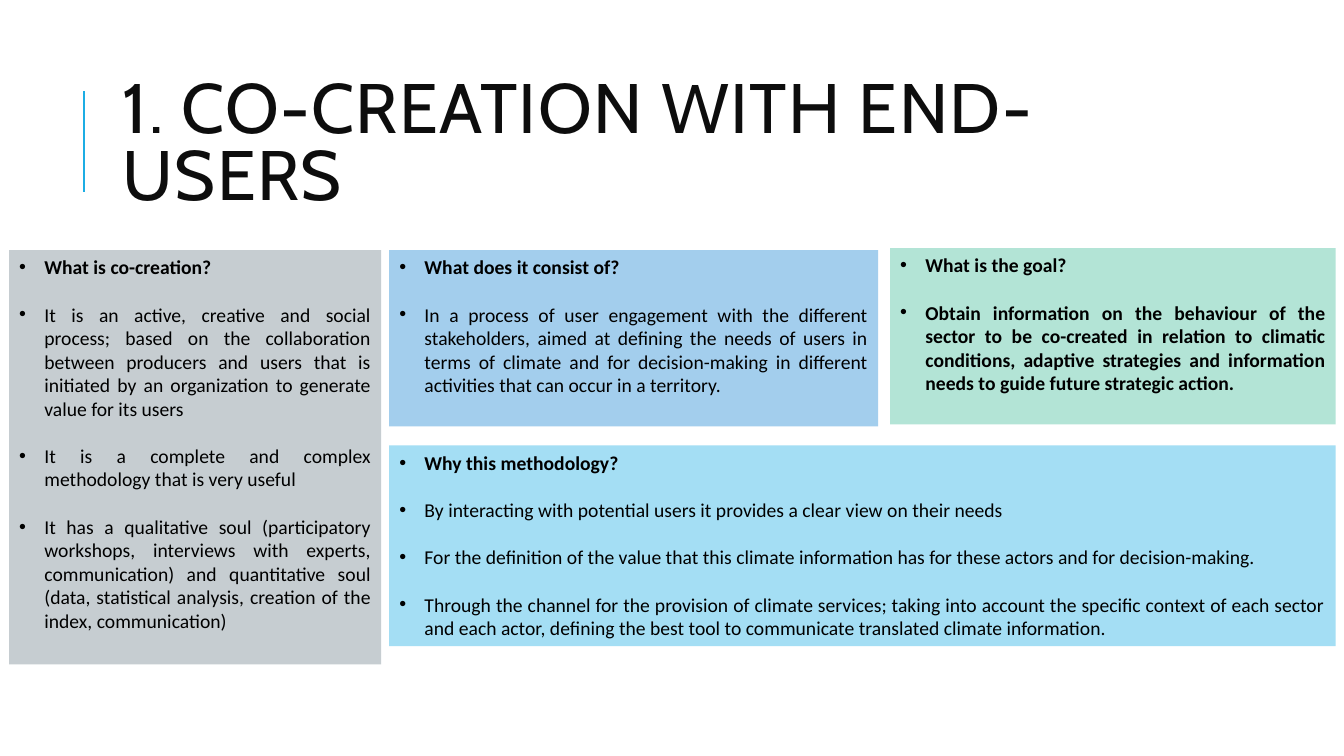
from lxml import etree
from pptx import Presentation
from pptx.dml import color
from pptx.enum import shapes, text
from pptx.oxml import ns
from pptx.util import Pt

# Content
TITLE = "1. CO-CREATION WITH END-USERS"
COLOURS = {"accent": "1CADE4", "title": "0D0D0D", "text": "000000",
           "grey": "C6CDD1", "blue": "A3CEED", "green": "B3E4D6", "sky": "A4DEF4"}
WHAT = ["What is co-creation?",
        "It is an active, creative and social process; based on the collaboration between "
        "producers and users that is initiated by an organization to generate value for its users",
        "It is a complete and complex methodology that is very useful",
        "It has a qualitative soul (participatory workshops, interviews with experts, "
        "communication) and quantitative soul (data, statistical analysis, creation of the "
        "index, communication)"]
CONTENTS = ["What does it consist of?",
            "In a process of user engagement with the different stakeholders, aimed at defining "
            "the needs of users in terms of climate and for decision-making in different "
            "activities that can occur in a territory."]
GOAL = ["What is the goal?",
        "Obtain information on the behaviour of the sector to be co-created in relation to "
        "climatic conditions, adaptive strategies and information needs to guide future "
        "strategic action."]
WHY = ["Why this methodology?",
       "By interacting with potential users it provides a clear view on their needs",
       "For the definition of the value that this climate information has for these actors "
       "and for decision-making.",
       "Through the channel for the provision of climate services; taking into account the "
       "specific context of each sector and each actor, defining the best tool to communicate "
       "translated climate information."]

# Layout in points
LEFT, MIDDLE, GOAL_LEFT, RIGHT = 6.5, 278, 635.8, 954
TOP, UPPER_HEIGHT = 178.6, 126
PANELS = [  # lines, fill, left, top, width, height, number of bold lines
    (WHAT, "grey", LEFT, TOP, 265.7, 296, 1),
    (CONTENTS, "blue", MIDDLE, TOP, 349.2, UPPER_HEIGHT, 1),
    (GOAL, "green", GOAL_LEFT, TOP - 1.4, RIGHT - GOAL_LEFT, UPPER_HEIGHT, 2),
    (WHY, "sky", MIDDLE, 318.2, RIGHT - MIDDLE, 143.3, 1),
]


def rgb(name):
    return color.RGBColor.from_string(COLOURS[name])


def place(shape, left, top, width, height, anchor):
    shape.left, shape.top, shape.width, shape.height = map(Pt, (left, top, width, height))
    frame = shape.text_frame
    frame.word_wrap = True
    frame.auto_size = text.MSO_AUTO_SIZE.NONE
    frame.vertical_anchor = anchor
    return frame


def write(para, words, *, font, size, colour, bold=False, align=text.PP_ALIGN.LEFT,
          leading=1.0, before=0, after=0, tracking=0, bullet=None):
    para.alignment, para.line_spacing = align, leading
    para.space_before, para.space_after = Pt(before), Pt(after)
    span = para.add_run()
    span.text = words
    span.font.name, span.font.size, span.font.bold = font, Pt(size), bold
    span.font.color.rgb = rgb(colour)
    if tracking:
        span.font._element.set("spc", str(tracking * 100))
    if bullet:
        properties = para._p.get_or_add_pPr()
        properties.set("marL", str(Pt(18)))
        properties.set("indent", str(-Pt(18)))
        etree.SubElement(properties, ns.qn("a:buFont")).set("typeface", "Arial")
        etree.SubElement(properties, ns.qn("a:buChar")).set("char", bullet)


deck = Presentation()
deck.slide_width, deck.slide_height = Pt(960), Pt(540)
# The comparison layout has a title and four bodies
page = deck.slides.add_slide(deck.slide_layouts[4])

# Accent line
accent = page.shapes.add_connector(shapes.MSO_CONNECTOR.STRAIGHT,
                                   Pt(60), Pt(136.8), Pt(60), Pt(64.8))
accent.line.color.rgb = rgb("accent")
accent.line.width = Pt(1.5)
etree.SubElement(accent._element.spPr, ns.qn("a:effectLst"))

# Title
title = place(page.shapes.title, 80.6, 46, 765.4, 118, text.MSO_ANCHOR.MIDDLE)
write(title.paragraphs[0], TITLE, font="Cabin", size=50, colour="title",
      leading=0.8, tracking=1)

# Panels
bodies = [box for box in page.placeholders if box.placeholder_format.idx > 0]
for box, (lines, fill, left, top, width, height, bold_lines) in zip(bodies, PANELS):
    box.fill.solid()
    box.fill.fore_color.rgb = rgb(fill)
    frame = place(box, left, top, width, height, text.MSO_ANCHOR.TOP)
    for number, line in enumerate(lines):
        para = frame.add_paragraph() if number else frame.paragraphs[0]
        write(para, line, font="Calibri", size=14, colour="text", bold=number < bold_lines,
              align=text.PP_ALIGN.JUSTIFY, before=5, after=12, bullet="•")

deck.save("out.pptx")
